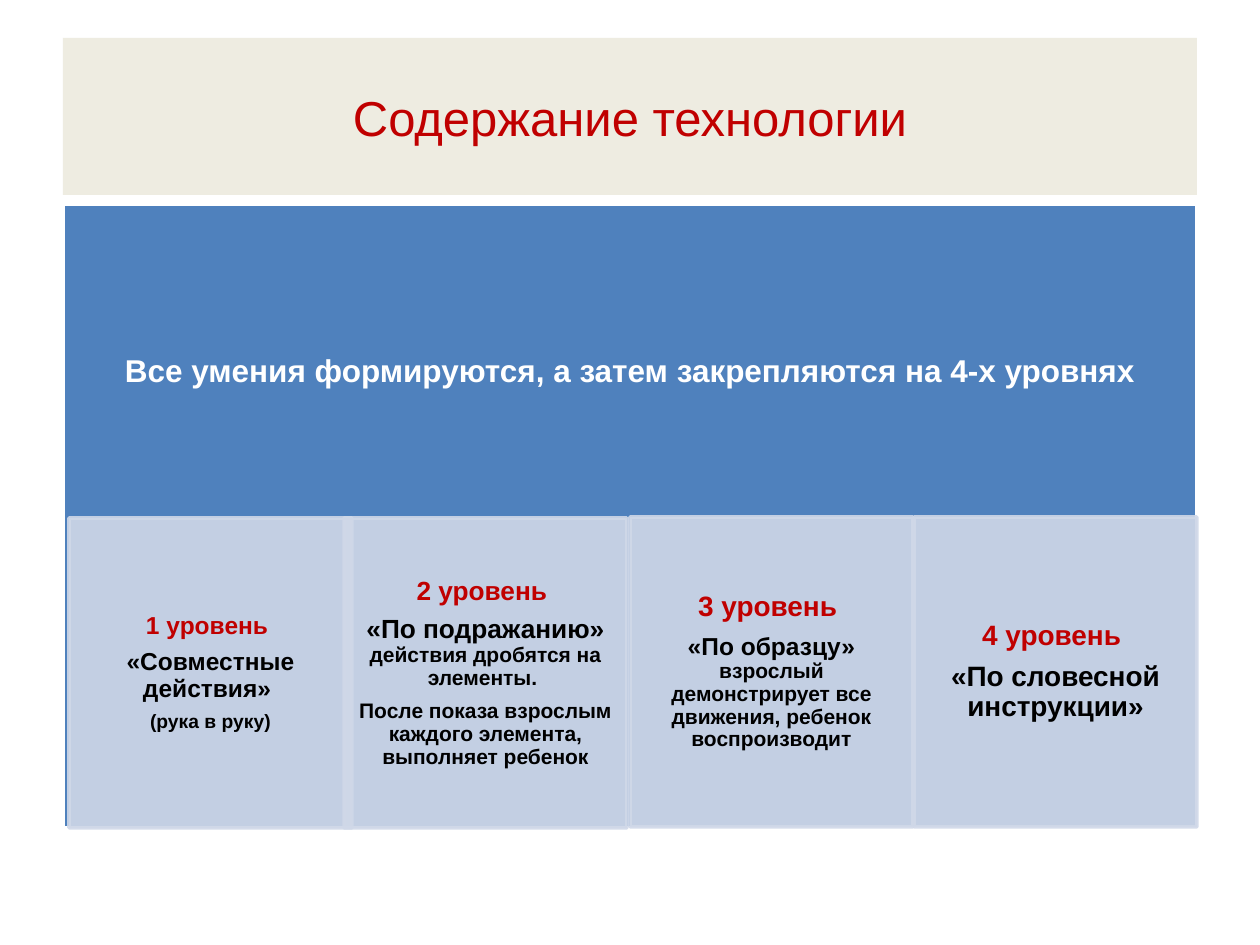
import pptx
import pptx.util
import pptx.dml.color
import pptx.enum.shapes
import pptx.enum.text
import pptx.oxml
import pptx.oxml.ns

RGBColor = pptx.dml.color.RGBColor
WHITE = RGBColor(0xFF, 0xFF, 0xFF)
BLACK = RGBColor(0x00, 0x00, 0x00)
RED = RGBColor(0xC0, 0x00, 0x00)
BLUE = RGBColor(0x4F, 0x81, 0xBD)
PALE = RGBColor(0xD0, 0xD8, 0xE8)
CREAM = RGBColor(0xEE, 0xEC, 0xE1)

PX = 914400 / 126


def add_rect(s, box, fill, line=None, opacity=100):
    sp = s.shapes.add_shape(pptx.enum.shapes.MSO_SHAPE.RECTANGLE,
                            *[round(v * PX) for v in box])
    sp.shadow.inherit = False
    sp.fill.solid()
    sp.fill.fore_color.rgb = fill
    if line is None:
        sp.line.fill.background()
    else:
        sp.line.color.rgb = line
        sp.line.width = pptx.util.Pt(2)
    if opacity < 100:
        for clr in sp._element.spPr.iter(pptx.oxml.ns.qn("a:srgbClr")):
            alpha = pptx.oxml.parse_xml(
                f'<a:alpha {pptx.oxml.ns.nsdecls("a")} val="{opacity * 1000}"/>')
            clr.append(alpha)
    return sp


def write(sp, paragraphs, inset_x, inset_y, bold=True, spacing=0.9):
    tf = sp.text_frame
    tf.word_wrap = True
    tf.vertical_anchor = pptx.enum.text.MSO_ANCHOR.MIDDLE
    tf.margin_left = tf.margin_right = round(inset_x * PX)
    tf.margin_top = tf.margin_bottom = round(inset_y * PX)
    for i, runs in enumerate(paragraphs):
        p = tf.paragraphs[0] if i == 0 else tf.add_paragraph()
        p.alignment = pptx.enum.text.PP_ALIGN.CENTER
        p.line_spacing = spacing
        if i < len(paragraphs) - 1:
            p.space_after = pptx.util.Pt(round(runs[0][1] * 0.4, 1))
        for text, size, color in runs:
            r = p.add_run()
            r.text = text
            r.font.name = "Arial"
            r.font.size = pptx.util.Pt(size)
            r.font.bold = bold
            r.font.color.rgb = color


prs = pptx.Presentation()
prs.slide_width = round(1260 * PX)
prs.slide_height = round(945 * PX)
s = prs.slides.add_slide(prs.slide_layouts[6])

# Blue panel with the main statement in its upper part
add_rect(s, (63, 204, 1134, 624), BLUE, WHITE)
statement = s.shapes.add_textbox(*[round(v * PX) for v in (63, 204, 1134, 336)])
write(statement, [[("Все умения формируются, а затем закрепляются на 4-х уровнях",
                    18, WHITE)]], 18, 18)

# Four level cards: left, top, paragraphs of (text, size, colour)
levels = [
    (69, 518, [[("1 уровень ", 14, RED)],
               [("«Совместные действия» ", 14, BLACK)],
               [("(рука в руку)", 11, BLACK)]]),
    (344, 518, [[("2 уровень ", 15, RED)],
                [("«По подражанию» ", 15, BLACK),
                 ("действия дробятся на элементы. ", 12, BLACK)],
                [("После показа взрослым каждого элемента, выполняет ребенок",
                  12, BLACK)]]),
    (630, 517, [[("3 уровень ", 16, RED)],
                [("«По образцу» ", 14, BLACK),
                 ("взрослый демонстрирует все движения, ребенок воспроизводит",
                  12, BLACK)]]),
    (914, 517, [[("4 уровень ", 16, RED)],
                [("«По словесной инструкции»", 16, BLACK)]]),
]
for left, top, paragraphs in levels:
    card = add_rect(s, (left, top, 283, 310), PALE, PALE, opacity=90)
    write(card, paragraphs, 15, 3)

# Title band
title = add_rect(s, (63, 38, 1134, 157), CREAM)
write(title, [[("Содержание технологии", 28, RED)]], 13, 6, bold=False, spacing=1.0)

prs.save("out.pptx")
